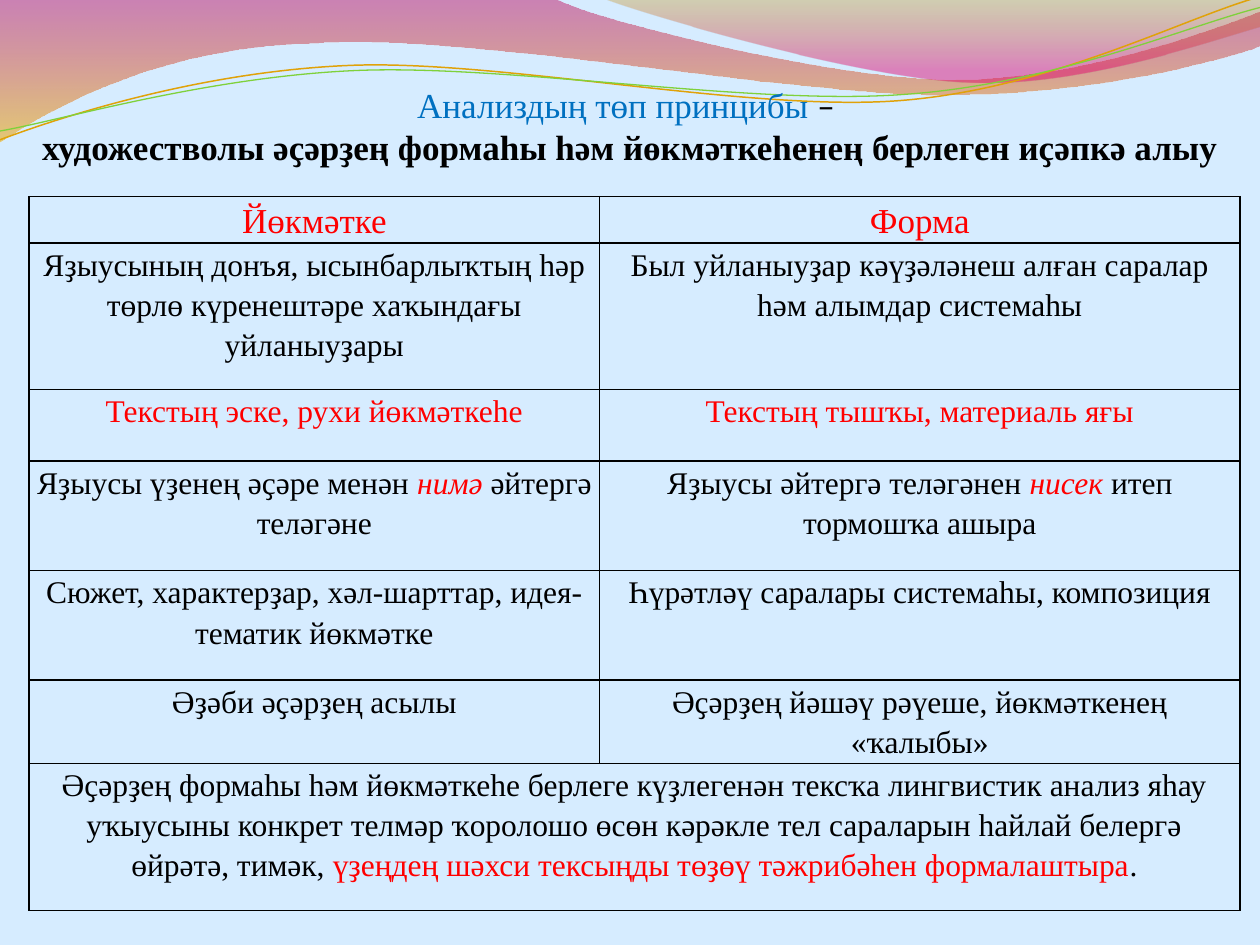
from math import cos, radians, sin

from lxml import etree
from pptx import Presentation, util as u
from pptx.dml.color import RGBColor
from pptx.enum import text
from pptx.oxml import ns

FONT = "Times New Roman"
BLACK = RGBColor(0x00, 0x00, 0x00)
RED = RGBColor(0xFF, 0x00, 0x00)
BLUE = RGBColor(0x00, 0x70, 0xC0)
SKY = RGBColor(0xD6, 0xEC, 0xFF)
PINK = RGBColor(0xBD, 0x00, 0x59)
AMBER = RGBColor(0xF0, 0xAB, 0x00)
OCHRE = RGBColor(0xC3, 0x8B, 0x00)
MAGENTA = RGBColor(0xE1, 0x00, 0x6B)
GOLD = RGBColor(0xE0, 0xA2, 0x09)
GREEN = RGBColor(0x7F, 0xD1, 0x3B)

PLAIN = {"name": FONT, "size": u.Pt(18), "bold": False, "italic": False}
BODY = {**PLAIN, "color": BLACK}
ACCENT = {**PLAIN, "color": RED}
STRESS = {**ACCENT, "italic": True}
HEAD = {**ACCENT, "size": u.Pt(20)}
TITLE = {**PLAIN, "size": u.Pt(20), "color": BLUE}

# Each paragraph is a list of (wording, format) spans.
TITLE_LINES = [
    [("Анализдың төп принцибы ", TITLE), ("– ", {**TITLE, "name": "Calibri", "color": BLACK})],
    [("художестволы әҫәрҙең формаһы һәм йөкмәткеһенең берлеген иҫәпкә алыу",
      {**TITLE, "bold": True, "color": BLACK})],
]
COLUMNS = [4.53, 5.08]
# Row height, then one paragraph per cell; a single paragraph spans the row.
ROWS = [
    (0.37, [[("Йөкмәтке", HEAD)], [("Форма", HEAD)]]),
    (1.16, [[("Яҙыусының донъя, ысынбарлыҡтың һәр төрлө күренештәре хаҡындағы уйланыуҙары", BODY)],
            [("Был уйланыуҙар кәүҙәләнеш алған саралар һәм алымдар системаһы", BODY)]]),
    (0.57, [[("Текстың эске, рухи йөкмәткеһе", ACCENT)],
            [("Текстың тышҡы, материаль яғы", ACCENT)]]),
    (0.87, [[("Яҙыусы үҙенең әҫәре менән ", BODY), ("нимә", STRESS), (" әйтергә теләгәне", BODY)],
            [("Яҙыусы әйтергә теләгәнен ", BODY), ("нисек", STRESS),
             (" итеп тормошҡа ашыра", BODY)]]),
    (0.87, [[("Сюжет, характерҙар, хәл-шарттар, идея-тематик йөкмәтке", BODY)],
            [("Һүрәтләү саралары системаһы, композиция", BODY)]]),
    (0.66, [[("Әҙәби әҫәрҙең асылы", BODY)],
            [("Әҫәрҙең йәшәү рәүеше, йөкмәткенең «ҡалыбы»", BODY)]]),
    (1.17, [[("Әҫәрҙең формаһы һәм йөкмәткеһе берлеге күҙлегенән тексҡа лингвистик анализ яһау "
              "уҡыусыны конкрет телмәр ҡоролошо өсөн кәрәкле тел сараларын һайлай белергә "
              "өйрәтә, тимәк, ", BODY),
             ("үҙеңдең шәхси тексыңды төҙөү тәжрибәһен формалаштыра", ACCENT), (".", BODY)]]),
]

# Outlines in inches: a pair is a corner, six numbers are a Bezier segment.
# Gradient stops are (position, colour, opacity in percent), from the top down.
BANDS = [
    ([(0, 0), (4.4, -0.01), (4.76, 0.17, 6.64, 0.63, 7.58, 0.63),
      (8.53, 0.63, 9.58, 0.26, 10, 0.09), (10.01, 0.36),
      (9.83, 0.44, 8.7, 0.76, 7.46, 0.75), (6.22, 0.75, 3.82, 0.28, 2.57, 0.34),
      (1.29, 0.36, 0.46, 0.83, -0.01, 1.13), (0, 0)],
     [(0, PINK, 45), (1, AMBER, 55)]),
    ([(4.79, -0.01), (5.09, 0.11, 6.82, 0.62, 7.69, 0.65),
      (8.56, 0.69, 9.61, 0.32, 10, 0.21), (10, 0), (4.79, -0.01)],
     [(0, OCHRE, 30), (0.8, MAGENTA, 45)]),
]
STRANDS = [
    ([(0, 1.11), (0.48, 0.93, 1.58, 0.57, 2.77, 0.52), (3.95, 0.47, 5.93, 0.89, 7.13, 0.8),
      (8.33, 0.71, 9.38, 0.15, 9.98, -0.02)], GOLD, 0.85),
    ([(0, 1.04), (0.47, 0.96, 1.64, 0.61, 2.83, 0.56), (4.03, 0.51, 5.97, 0.84, 7.17, 0.75),
      (8.36, 0.67, 9.41, 0.21, 10, 0.06)], GREEN, 0.75),
]
STRAND_TILT = -2.7
STRAND_CENTER = (5, 0.58)


def level(x, y):
    """Undo the tilt of a strand, which the shape's rotation then restores."""
    angle = radians(-STRAND_TILT)
    dx, dy = x - STRAND_CENTER[0], y - STRAND_CENTER[1]
    return (STRAND_CENTER[0] + dx * cos(angle) - dy * sin(angle),
            STRAND_CENTER[1] + dx * sin(angle) + dy * cos(angle))


def draw_outline(page, outline, close, place=lambda x, y: (x, y)):
    """Lay down every knot as a line, then fold each Bezier's three lines into a curve."""
    start, *knots = [tuple(u.Inches(value) for value in place(*part[i:i + 2]))
                     for part in outline for i in range(0, len(part), 2)]
    builder = page.shapes.build_freeform(*start)
    builder.add_line_segments(knots, close=close)
    shape = builder.convert_to_shape()
    lines = iter(list(shape._element.iter(ns.qn("a:lnTo"))))
    for part in outline[1:]:
        line = next(lines)
        if len(part) == 6:
            line.tag = ns.qn("a:cubicBezTo")
            for _ in range(2):
                extra = next(lines)
                line.append(extra[0])
                extra.getparent().remove(extra)
    shape.shadow.inherit = False
    return shape


def draw_waves(page):
    for outline, stops in BANDS:
        band = draw_outline(page, outline, True)
        band.line.fill.background()
        band.fill.gradient()
        band.fill.gradient_angle = 270
        for stop, (position, color, _) in zip(band.fill.gradient_stops, stops):
            stop.position = position
            stop.color.rgb = color
        colors = band._element.spPr.iter(ns.qn("a:srgbClr"))
        for color, (_, _, opacity) in zip(colors, stops):
            etree.SubElement(color, ns.qn("a:alpha"), val=str(opacity * 1000))
    for outline, color, width in STRANDS:
        strand = draw_outline(page, outline, False, level)
        strand.rotation = STRAND_TILT
        strand.fill.background()
        strand.line.color.rgb = color
        strand.line.width = u.Pt(width)


def write(para, spans):
    para.alignment = text.PP_ALIGN.CENTER
    for wording, look in spans:
        span = para.add_run()
        span.text = wording
        for name, value in look.items():
            if name == "color":
                span.font.color.rgb = value
            else:
                setattr(span.font, name, value)


def add_borders(cell):
    for side in ("lnL", "lnR", "lnT", "lnB"):
        line = etree.SubElement(cell._tc.get_or_add_tcPr(), ns.qn(f"a:{side}"),
                                w=str(u.Pt(1)))
        fill = etree.SubElement(line, ns.qn("a:solidFill"))
        etree.SubElement(fill, ns.qn("a:srgbClr"), val=str(BLACK))


def add_comparison(page):
    heights = [height for height, _ in ROWS]
    frame = page.shapes.add_table(len(ROWS), len(COLUMNS), u.Inches(0.23), u.Inches(1.56),
                                  u.Inches(sum(COLUMNS)), u.Inches(sum(heights)))
    table = frame.table
    table.first_row = table.horz_banding = False
    for column, width in zip(table.columns, COLUMNS):
        column.width = u.Inches(width)
    for row, (height, paragraphs) in zip(table.rows, ROWS):
        row.height = u.Inches(height)
        cells = list(row.cells)
        for cell in cells:
            add_borders(cell)
            cell.fill.background()
            cell.margin_left = cell.margin_right = u.Inches(0.05)
            cell.margin_top = cell.margin_bottom = 0
        if len(paragraphs) == 1:
            cells[0].merge(cells[-1])
        for cell, spans in zip(cells, paragraphs):
            para = cell.text_frame.paragraphs[0]
            para.line_spacing = 1.15
            write(para, spans)


def place_title(page):
    title = page.shapes.title
    title.left, title.top, title.width, title.height = 0, 0, u.Inches(10), u.Inches(2.1)
    box = title.text_frame
    box.word_wrap = True
    box.auto_size = text.MSO_AUTO_SIZE.NONE
    box.vertical_anchor = text.MSO_ANCHOR.MIDDLE
    box.margin_bottom = u.Inches(0.16)
    for index, spans in enumerate(TITLE_LINES):
        para = box.add_paragraph() if index else box.paragraphs[0]
        para.space_before = 0
        write(para, spans)
    page.shapes._spTree.append(title._element)  # in front of the waves


def main():
    deck = Presentation()
    deck.slide_width, deck.slide_height = u.Inches(10), u.Inches(7.5)
    page = deck.slides.add_slide(deck.slide_layouts[5])
    page.background.fill.solid()
    page.background.fill.fore_color.rgb = SKY
    draw_waves(page)
    add_comparison(page)
    place_title(page)
    deck.save("out.pptx")


if __name__ == "__main__":
    main()
